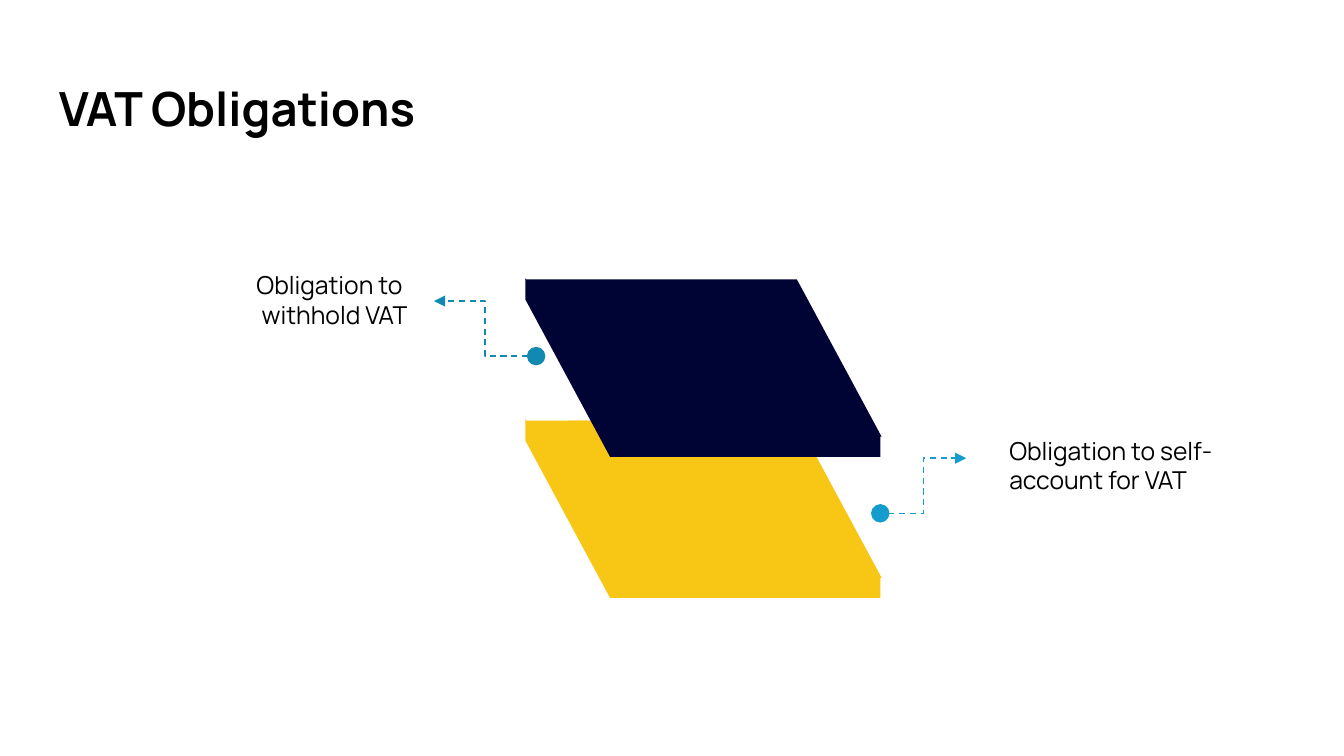
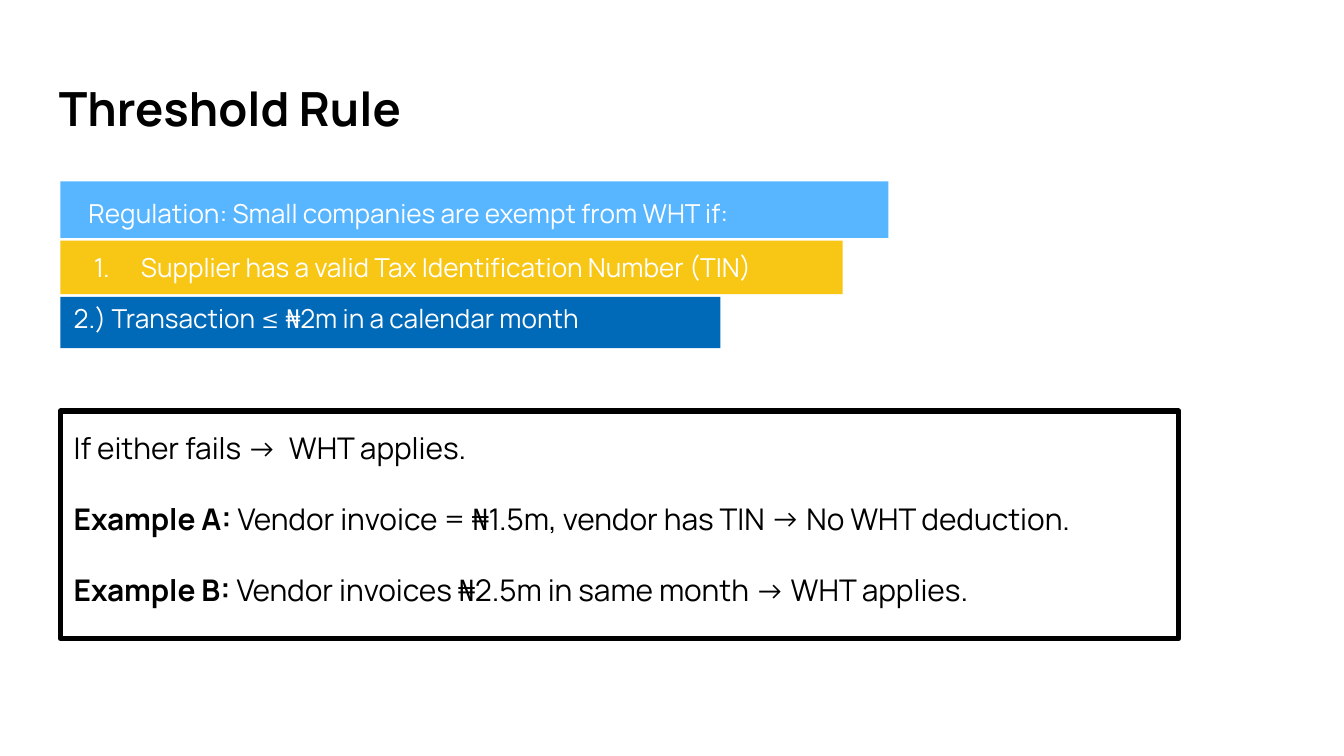
from dataclasses import dataclass

from lxml import etree
from pptx import Presentation
from pptx.dml.color import RGBColor
from pptx.enum.dml import MSO_LINE
from pptx.enum.shapes import MSO_CONNECTOR, MSO_SHAPE
from pptx.enum.text import MSO_ANCHOR, PP_ALIGN
from pptx.oxml.ns import qn
from pptx.util import Inches, Pt

RECT = MSO_SHAPE.RECTANGLE
ELBOW = MSO_CONNECTOR.ELBOW
DASH = MSO_LINE.DASH
TOP, MID = MSO_ANCHOR.TOP, MSO_ANCHOR.MIDDLE
LEFT, RIGHT = PP_ALIGN.LEFT, PP_ALIGN.RIGHT


@dataclass(frozen=True)
class Theme:
    font: str = "Manrope"
    black: str = "000000"
    white: str = "FFFFFF"
    gold: str = "F8C614"
    navy: str = "000435"
    sky: str = "57B6FF"
    blue: str = "0069B8"
    teal: str = "1189B2"
    cyan: str = "149DCC"
    title: float = 25.2
    label: float = 13.2
    bar: float = 14
    body: float = 16


T = Theme()

# Slabs from back to front; label is (box, lines, alignment)
SLABS = [
    dict(top=3.12, fill=T.gold, inner=True, line=T.cyan,
         start=(6.55, 3.82), end=(7.19, 3.41),
         label=((7.43, 3.2, 2.04, 0.53),
                ["Obligation to self-account for VAT"], LEFT)),
    dict(top=2.07, fill=T.navy, inner=False, line=T.teal,
         start=(3.99, 2.65), end=(3.23, 2.24),
         label=((0.99, 1.97, 2.12, 0.53),
                ["Obligation to ", "withhold VAT"], RIGHT)),
]
# Bars: box, fill, text, text box (None puts the text in a numbered bar)
BARS = [
    ((0.45, 1.35, 6.16, 0.42), T.sky,
     "Regulation: Small companies are exempt from WHT if:",
     (0.56, 1.39, 6.05, 0.39)),
    ((0.45, 1.79, 5.82, 0.4), T.gold,
     "Supplier has a valid Tax Identification Number (TIN)", None),
    ((0.45, 2.21, 4.91, 0.38), T.blue,
     "2.) Transaction ≤ ₦2m in a calendar month",
     (0.45, 2.19, 4.84, 0.36)),
]
CASES = [
    ("", "If either fails →  WHT applies."),
    ("Example A:", " Vendor invoice = ₦1.5m, vendor has TIN → No WHT deduction."),
    ("Example B:", " Vendor invoices ₦2.5m in same month → WHT applies."),
]
TITLE_BOX = (0.34, 0.49, 9.32, 0.63)
CASE_BOX = (0.45, 3.06, 8.32, 1.69)
SLAB_X, FRONT_X, SLAB_R, BACK_R = 3.91, 4.54, 6.56, 5.93
DEPTH, EDGE = 1.17, 0.16


def rgb(code):
    return RGBColor.from_string(code)


def inch(vals):
    return [Inches(v) for v in vals]


def sub(node, tag, **attrs):
    return etree.SubElement(node, qn(tag), attrs)


def paint(shape, fill):
    shape.shadow.inherit = False
    shape.line.fill.background()
    shape.fill.solid()
    shape.fill.fore_color.rgb = rgb(fill)


def rect(shapes, box, fill):
    shape = shapes.add_shape(RECT, *inch(box))
    paint(shape, fill)
    return shape


def outline(shapes, pts, fill):
    first, *rest = [inch(p) for p in pts]
    form = shapes.build_freeform(*first)
    form.add_line_segments(rest, close=True)
    paint(form.convert_to_shape(), fill)


def frame(shape, pad, anchor):
    tf = shape.text_frame
    tf.word_wrap = True
    tf.vertical_anchor = anchor
    tf.margin_left = tf.margin_right = Inches(pad[0])
    tf.margin_top = tf.margin_bottom = Inches(pad[1])
    return tf


def style(tf, size, color, bold=False, align=LEFT):
    for para in tf.paragraphs:
        para.alignment = align
        for run in para.runs:
            font = run.font
            font.name, font.size, font.bold = T.font, Pt(size), bold
            font.color.rgb = rgb(color)


def write(shapes, box, lines, size, color, pad=(0.1, 0.1), anchor=MID,
          **look):
    tf = frame(shapes.add_textbox(*inch(box)), pad, anchor)
    tf.text = "\n".join(lines)
    style(tf, size, color, **look)


def new_slide(deck, title):
    slide = deck.slides.add_slide(deck.slide_layouts[6])
    write(slide.shapes, TITLE_BOX, [title], T.title, T.black, bold=True)
    return slide.shapes


def arrow(shapes, start, end, color):
    """Draw a dashed elbow from a dot to an arrowhead."""
    link = shapes.add_connector(ELBOW, *inch(start), *inch(end))
    link.line.color.rgb = rgb(color)
    link.line.width = Pt(0.82)
    link.line.dash_style = DASH
    ln = link.line._get_or_add_ln()
    sub(ln, "a:headEnd", type="oval", w="lg", len="lg")
    sub(ln, "a:tailEnd", type="triangle")
    sub(link._element.spPr, "a:effectLst")


def slab(shapes, top, fill, inner):
    """Draw a sheet with its left and front edges."""
    y, low = top + 0.01, top + 0.01 + DEPTH
    outline(shapes, [(FRONT_X, low), (SLAB_R, low), (BACK_R, y),
                     (SLAB_X, y)], fill)
    outline(shapes, [(SLAB_X, top), (SLAB_X, top + EDGE),
                     (FRONT_X, top + DEPTH + EDGE),
                     (FRONT_X, top + DEPTH)], fill)
    rect(shapes, (FRONT_X, top + DEPTH, 2.01, EDGE), fill)
    if inner:
        outline(shapes, [(4.62, y + 0.73), (6.31, y + 0.72), (BACK_R, y),
                         (4.23, y)], fill)


def number(para):
    ppr = para._p.get_or_add_pPr()
    ppr.set("marL", str(Inches(0.5)))
    ppr.set("indent", str(Inches(-0.35)))
    sub(sub(ppr, "a:buClr"), "a:srgbClr", val=T.white)
    sub(ppr, "a:buAutoNum", type="arabicPeriod")


def duties(deck):
    shapes = new_slide(deck, "VAT Obligations")
    for item in SLABS:
        group = shapes.add_group_shape().shapes
        slab(group, item["top"], item["fill"], item["inner"])
        arrow(group, item["start"], item["end"], item["line"])
        box, lines, align = item["label"]
        write(group, box, lines, T.label, T.black, (0.08, 0.04), TOP,
              align=align)


def bars(shapes):
    for box, fill, text, inset in BARS:
        bar = rect(shapes, box, fill)
        if inset:
            write(shapes, inset, [text], T.bar, T.white)
            continue
        tf = frame(bar, (0.1, 0.05), MID)
        tf.text = text
        style(tf, T.bar, T.white)
        number(tf.paragraphs[0])


def cases(shapes):
    panel = shapes.add_shape(RECT, *inch(CASE_BOX))
    panel.shadow.inherit = False
    panel.fill.background()
    panel.line.color.rgb = rgb(T.black)
    panel.line.width = Pt(3)
    sub(panel.line._get_or_add_ln(), "a:round")
    tf = frame(panel, (0.1, 0.1), TOP)
    tf.text = "\n".join(lead for lead, _ in CASES)
    for para, (_, rest) in zip(tf.paragraphs, CASES):
        para.add_run().text = rest
        para.line_spacing = 1.15
    style(tf, T.body, T.black)
    for para in tf.paragraphs[1:]:
        para.space_before = Pt(16)
        para.runs[0].font.bold = True
    tf.paragraphs[-1].space_after = Pt(16)


def main():
    deck = Presentation()
    deck.slide_width = Inches(10)
    deck.slide_height = deck.slide_width * 9 // 16
    duties(deck)
    shapes = new_slide(deck, "Threshold Rule")
    bars(shapes)
    cases(shapes)
    deck.save("out.pptx")


if __name__ == "__main__":
    main()
